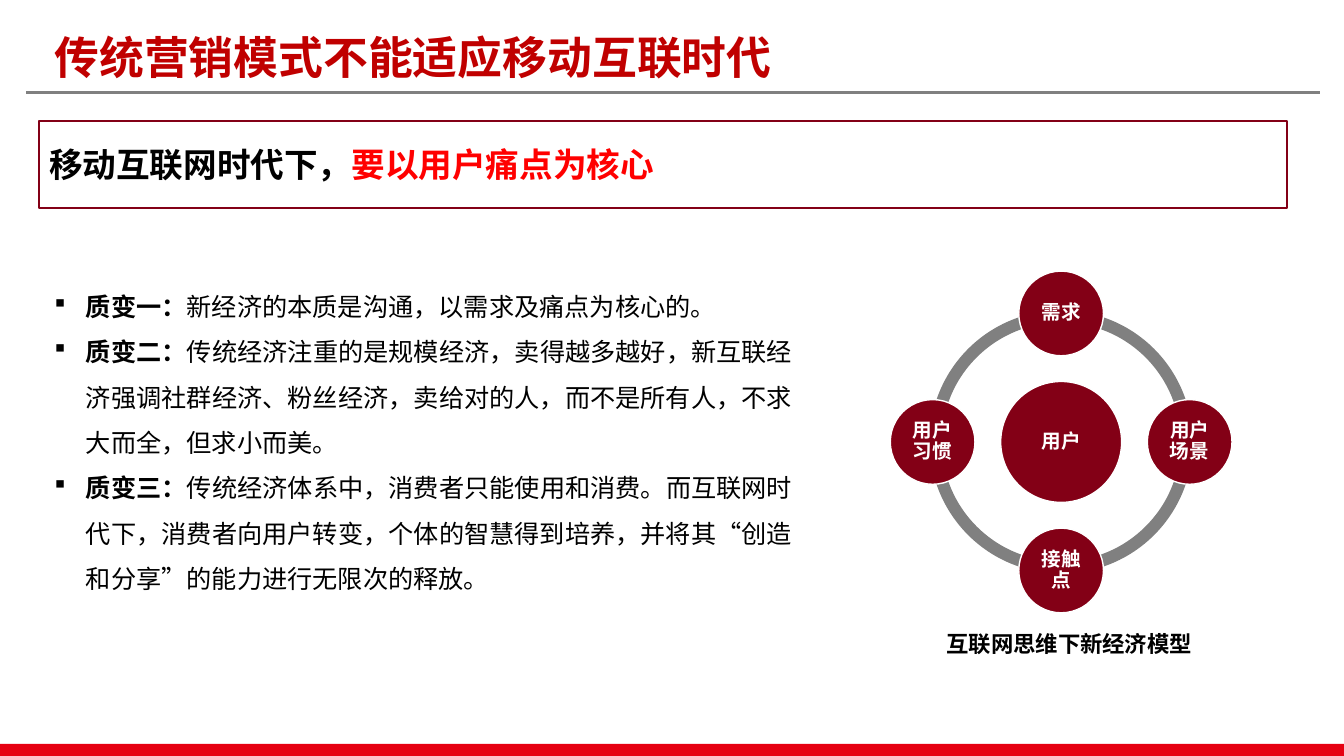
"""Build the slide on user-centred marketing in the mobile internet era."""
from lxml import etree
from pptx import Presentation
from pptx.dml.color import RGBColor
from pptx.enum import shapes, text
from pptx.oxml import ns
from pptx.util import Pt

SANS, SERIF = "Noto Sans CJK SC", "Times New Roman"
BLACK, WHITE, GREY, WINE = "000000", "FFFFFF", "808080", "830016"

TITLE = "传统营销模式不能适应移动互联时代"
CALLOUT = [("移动互联网时代下，", BLACK), ("要以用户痛点为核心", "FF0000")]
CHANGES = [
    ("质变一：", "新经济的本质是沟通，以需求及痛点为核心的。"),
    ("质变二：", "传统经济注重的是规模经济，卖得越多越好，新互联经济强调社群经济、"
     "粉丝经济，卖给对的人，而不是所有人，不求大而全，但求小而美。"),
    ("质变三：", "传统经济体系中，消费者只能使用和消费。而互联网时代下，消费者向用户转变，"
     "个体的智慧得到培养，并将其“创造和分享”的能力进行无限次的释放。"),
]
CORE = "用户"
NODES = [("需求", 0, -1), ("用户场景", 1, 0), ("接触点", 0, 1), ("用户习惯", -1, 0)]
CAPTION = "互联网思维下新经济模型"

CENTER_X, CENTER_Y, ORBIT = 758, 315.7, 91.8
RING_SIZE, CORE_SIZE, NODE_SIZE = 188, 86.4, 60.5
QUARTERS = [0, 54, 108, 162]


def rgb(color):
    return RGBColor.from_string(color)


def add_child(parent, tag, **attrs):
    return etree.SubElement(parent, ns.qn(tag), attrs)


def set_font(p, size, color=None, bold=None, name=SANS):
    f = p.font
    f.size, f.bold = Pt(size), bold
    if color:
        f.color.rgb = rgb(color)
    f.name = name
    add_child(p._p.pPr.find(ns.qn("a:defRPr")), "a:ea", typeface=SANS)


def place(sp, left, top, width, height):
    sp.left, sp.top, sp.width, sp.height = Pt(left), Pt(top), Pt(width), Pt(height)


def add_shape(s, kind, box, fill=None, line=None, weight=1):
    sp = s.shapes.add_shape(kind, *map(Pt, box))
    sp.shadow.inherit = False
    if fill:
        sp.fill.solid()
        sp.fill.fore_color.rgb = rgb(fill)
    else:
        sp.fill.background()
    if line:
        sp.line.color.rgb = rgb(line)
        sp.line.width = Pt(weight)
    else:
        sp.line.fill.background()
    return sp


def centered(x, y, size):
    return x - size / 2, y - size / 2, size, size


def add_disc(s, label, x, y, size):
    sp = add_shape(s, shapes.MSO_SHAPE.OVAL, centered(x, y, size), WINE, WHITE)
    tf = sp.text_frame
    tf.margin_left = tf.margin_right = tf.margin_top = tf.margin_bottom = Pt(1.4)
    p = tf.paragraphs[0]
    p.text = label
    p.alignment = text.PP_ALIGN.CENTER
    p.line_spacing = 0.9
    set_font(p, 14, WHITE, True)


def add_heading(s):
    sp = s.shapes.title
    place(sp, 31.7, 17.3, 726.5, 46)
    tf = sp.text_frame
    tf.auto_size = text.MSO_AUTO_SIZE.NONE
    tf.vertical_anchor = text.MSO_ANCHOR.MIDDLE
    p = tf.paragraphs[0]
    p.text = TITLE
    p.alignment = text.PP_ALIGN.LEFT
    set_font(p, 32, "C00000", True, SERIF)
    rule = s.shapes.add_connector(
        shapes.MSO_CONNECTOR.STRAIGHT, Pt(18.7), Pt(66.2), Pt(943.2), Pt(66.2))
    rule.line.color.rgb = rgb(GREY)
    rule.line.width = Pt(2.25)
    add_child(rule._element.spPr, "a:effectLst")


def add_callout(s):
    sp = add_shape(s, shapes.MSO_SHAPE.RECTANGLE, (28, 86.4, 891.4, 62), line=WINE, weight=1.5)
    p = sp.text_frame.paragraphs[0]
    p.alignment = text.PP_ALIGN.LEFT
    set_font(p, 24, bold=True)
    for words, color in CALLOUT:
        r = p.add_run()
        r.text = words
        r.font.color.rgb = rgb(color)


def add_changes(s):
    sp = s.placeholders[1]
    place(sp, 31.7, 193.7, 541.4, 269.3)
    tf = sp.text_frame
    tf.auto_size = text.MSO_AUTO_SIZE.NONE
    for i, change in enumerate(CHANGES):
        p = tf.add_paragraph() if i else tf.paragraphs[0]
        p.alignment = text.PP_ALIGN.JUSTIFY
        p.line_spacing = 1.5
        p.space_before = Pt(0)
        pPr = p._p.get_or_add_pPr()
        pPr.set("marL", str(Pt(22.5)))
        pPr.set("indent", str(-Pt(22.5)))
        add_child(pPr, "a:buFont", typeface="Wingdings")
        add_child(pPr, "a:buChar", char="§")
        set_font(p, 18, BLACK)
        for words, bold in zip(change, (True, False)):
            r = p.add_run()
            r.text = words
            r.font.bold = bold


def add_model(s):
    for start in QUARTERS:
        arc = add_shape(s, shapes.MSO_SHAPE.BLOCK_ARC,
                        centered(CENTER_X, CENTER_Y, RING_SIZE), GREY)
        arc.adjustments[0] = start
        arc.adjustments[1] = (start + 54) % 216
        arc.adjustments[2] = 0.046
    add_disc(s, CORE, CENTER_X, CENTER_Y, CORE_SIZE)
    for label, dx, dy in NODES:
        add_disc(s, label, CENTER_X + dx * ORBIT, CENTER_Y + dy * ORBIT, NODE_SIZE)
    tf = s.shapes.add_textbox(Pt(669), Pt(446.4), Pt(213), Pt(26.6)).text_frame
    tf.word_wrap = True
    p = tf.paragraphs[0]
    p.text = CAPTION
    set_font(p, 16, BLACK, True)


def main():
    prs = Presentation()
    prs.slide_width, prs.slide_height = Pt(960), Pt(540)
    s = prs.slides.add_slide(prs.slide_layouts[1])
    add_shape(s, shapes.MSO_SHAPE.RECTANGLE, (0, 531.4, 960, 8.6), "E60012")
    add_heading(s)
    add_callout(s)
    add_changes(s)
    add_model(s)
    prs.save("out.pptx")


if __name__ == "__main__":
    main()
